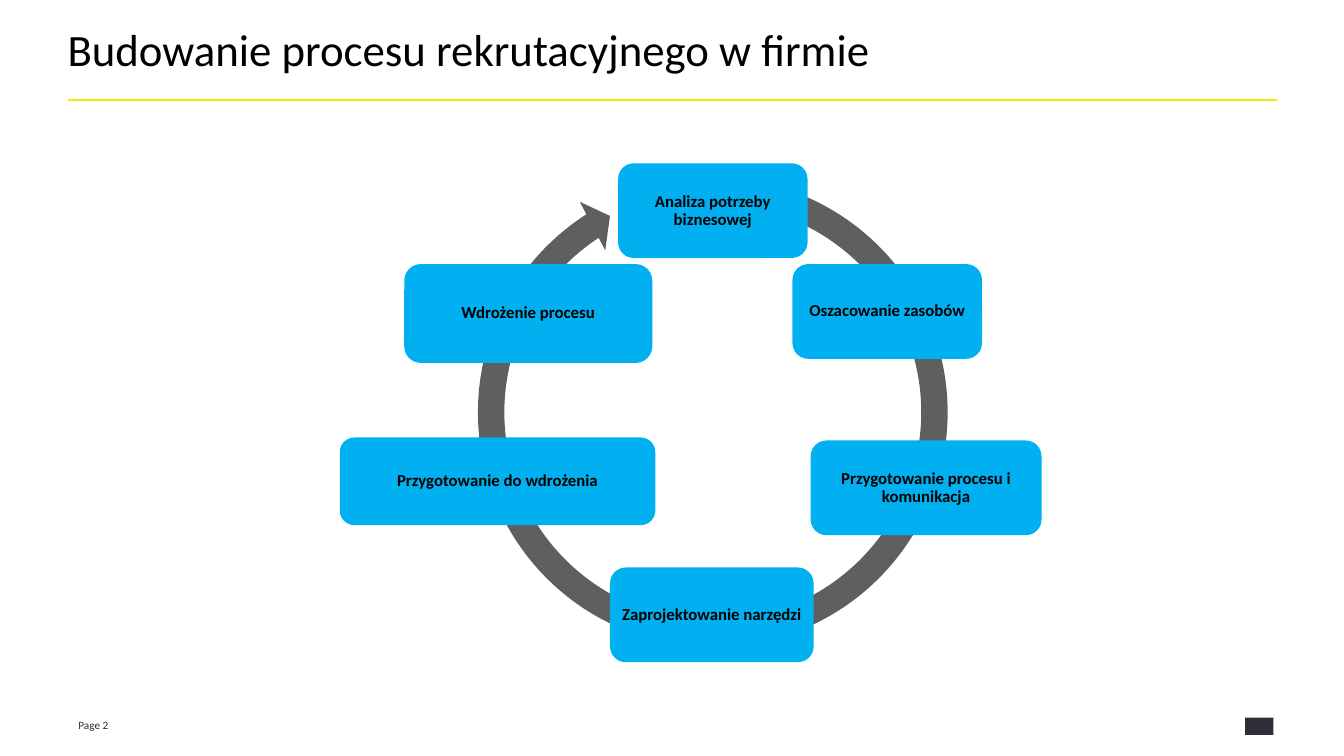
from dataclasses import dataclass

from lxml import etree
from pptx import Presentation
from pptx.dml.color import RGBColor
from pptx.enum.shapes import MSO_CONNECTOR, MSO_SHAPE
from pptx.enum.text import MSO_ANCHOR, MSO_AUTO_SIZE, PP_ALIGN
from pptx.oxml.ns import qn
from pptx.util import Inches, Pt

ROUND = MSO_SHAPE.ROUNDED_RECTANGLE
RECT = MSO_SHAPE.RECTANGLE
ARROW = MSO_SHAPE.CIRCULAR_ARROW
LINE = MSO_CONNECTOR.STRAIGHT
TOP, MIDDLE = MSO_ANCHOR.TOP, MSO_ANCHOR.MIDDLE
LEFT, CENTER = PP_ALIGN.LEFT, PP_ALIGN.CENTER
FIXED = MSO_AUTO_SIZE.NONE


@dataclass(frozen=True)
class Theme:
    font: str = "Calibri"
    ink: str = "000000"
    dark: str = "2E2E38"
    gold: str = "FFE600"
    blue: str = "00B0F0"
    gray: str = "5F5F5F"
    head: int = 32
    label: int = 12
    foot: int = 8


def write(frame, text, font, size, color, bold=False, align=LEFT,
          anchor=TOP, inset=(0, 0), lead=1.0):
    frame.word_wrap = True
    frame.auto_size = FIXED
    frame.vertical_anchor = anchor
    frame.margin_left = frame.margin_right = Inches(inset[0])
    frame.margin_top = frame.margin_bottom = Inches(inset[1])
    para = frame.paragraphs[0]
    para.alignment = align
    para.line_spacing = lead
    run = para.add_run()
    run.text = text
    run.font.name = font
    run.font.size = Pt(size)
    run.font.bold = bold
    run.font.color.rgb = RGBColor.from_string(color)


class Deck:
    def __init__(self, theme):
        self.theme = theme
        self.file = Presentation()
        self.file.slide_width = Inches(13.33)
        self.file.slide_height = Inches(7.5)
        self.slide = self.file.slides.add_slide(self.file.slide_layouts[5])

    def title(self, text, *box):
        item = self.slide.shapes.title
        item.left, item.top, item.width, item.height = map(Inches, box)
        write(item.text_frame, text, self.theme.font, self.theme.head,
              self.theme.ink, lead=0.85)

    def shape(self, kind, color, *box):
        item = self.slide.shapes.add_shape(kind, *map(Inches, box))
        item.shadow.inherit = False
        item.fill.solid()
        item.fill.fore_color.rgb = RGBColor.from_string(color)
        item.line.fill.background()
        return item

    def step(self, text, *box):
        item = self.shape(ROUND, self.theme.blue, *box)
        write(item.text_frame, text, self.theme.font, self.theme.label,
              self.theme.ink, bold=True, align=CENTER, anchor=MIDDLE,
              inset=(0.05, 0.05), lead=0.9)

    def ring(self, *box):
        item = self.shape(ARROW, self.theme.gray, *box)
        for spot, value in enumerate((0.053, 3.126, 142.288, 171.266, 0.055)):
            item.adjustments[spot] = value

    def rule(self, *ends):
        item = self.slide.shapes.add_connector(LINE, *map(Inches, ends))
        item.line.color.rgb = RGBColor.from_string(self.theme.gold)
        item.line.width = Pt(1.5)
        etree.SubElement(item._element.spPr, qn("a:effectLst"))

    def foot(self, text, *box):
        item = self.slide.shapes.add_textbox(*map(Inches, box))
        write(item.text_frame, text, self.theme.font, self.theme.foot,
              self.theme.dark, inset=(0.1, 0.05))


STEPS = (
    ("Analiza potrzeby biznesowej", 6.13, 1.62, 1.88, 0.94),
    ("Oszacowanie zasobów", 7.86, 2.62, 1.88, 0.94),
    ("Przygotowanie procesu i komunikacja", 8.04, 4.37, 2.29, 0.94),
    ("Zaprojektowanie narzędzi", 6.05, 5.63, 2.02, 0.94),
    ("Przygotowanie do wdrożenia", 3.37, 4.34, 3.13, 0.87),
    ("Wdrożenie procesu", 4.01, 2.62, 2.46, 0.98),
)


def main():
    theme = Theme()
    deck = Deck(theme)
    deck.title("Budowanie procesu rekrutacyjnego w firmie", 0.67, 0.3, 12, 0.94)
    deck.rule(0.67, 0.99, 12.67, 0.99)
    deck.ring(4.6, 1.62, 4.94, 4.94)
    for step in STEPS:
        deck.step(*step)
    deck.foot("Page 2", 0.68, 7.08, 0.73, 0.2)
    deck.shape(RECT, theme.dark, 12.35, 7.12, 0.28, 0.17)
    deck.file.save("out.pptx")


if __name__ == "__main__":
    main()
